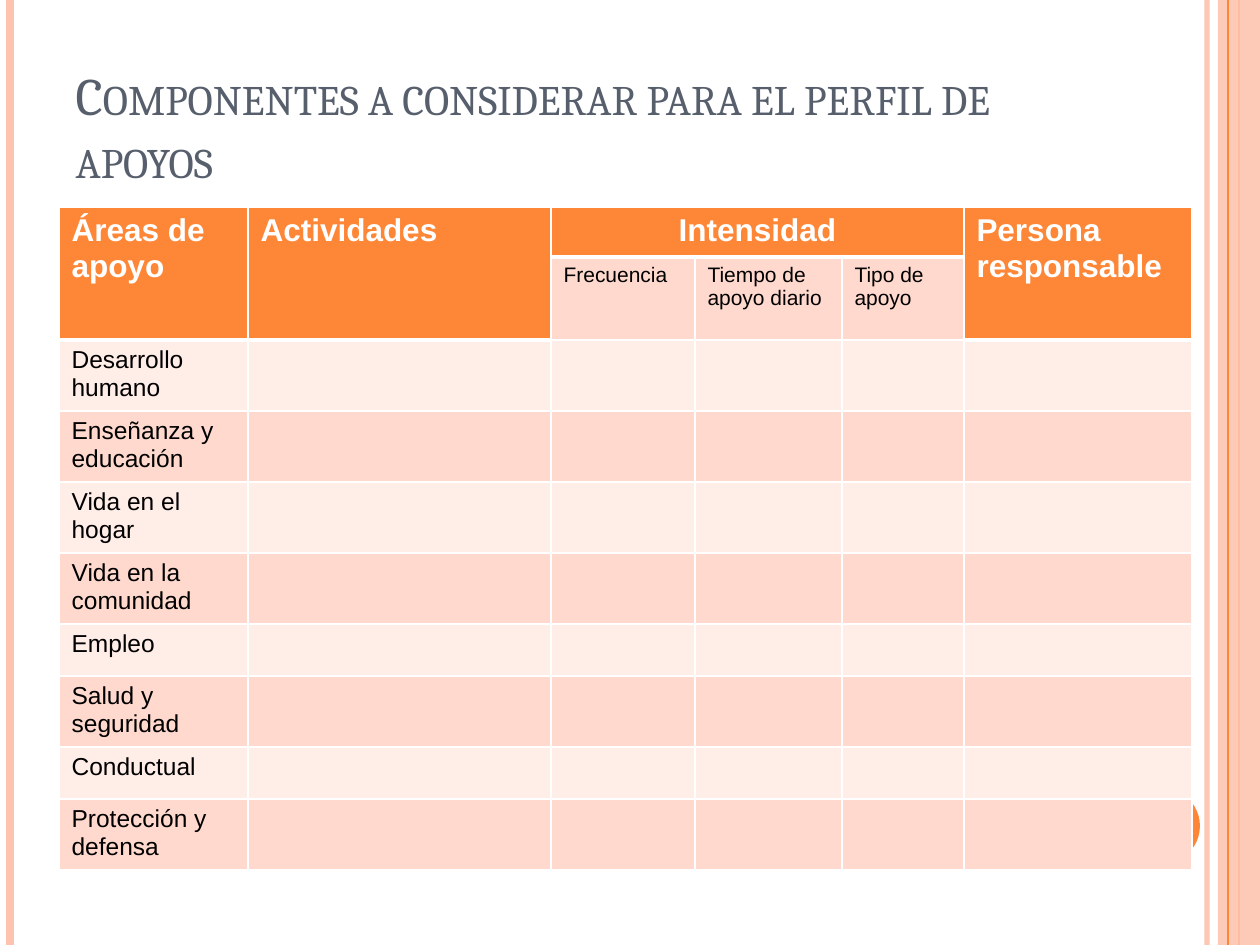
from lxml.etree import SubElement
from pptx import Presentation
from pptx.dml.color import RGBColor
from pptx.enum.shapes import MSO_CONNECTOR, MSO_SHAPE
from pptx.enum.text import MSO_ANCHOR, MSO_AUTO_SIZE, PP_ALIGN
from pptx.oxml.ns import qn
from pptx.util import Pt

PX = 914400 / 126
WIDTH, HEIGHT = 1260, 945
COLORS = {
    "orange": "FE8637", "peach": "FEC3AE", "slate": "575F6D",
    "band_dark": "FFD9CE", "band_light": "FFEDE8",
    "white": "FFFFFF", "black": "000000",
}
# x, colour, width in points, opacity in percent
VERTICAL_LINES = [
    (1207, "peach", 3, 93), (10, "peach", 4.5, 100),
    (1239, "orange", 1.5, 100), (1228, "orange", 0.75, 100),
]
COLUMN_WIDTHS = [189, 303, 144, 147, 122, 228]
ROW_HEIGHTS = [50, 83, 71, 71, 71, 71, 52, 71, 52, 71]
HEADINGS = ["Áreas de apoyo", "Actividades", "Intensidad", "", "", "Persona responsable"]
SUBHEADINGS = ["", "", "Frecuencia", "Tiempo de apoyo diario", "Tipo de apoyo", ""]
SUPPORT_AREAS = [
    "Desarrollo humano", "Enseñanza y educación", "Vida en el hogar",
    "Vida en la comunidad", "Empleo", "Salud y seguridad", "Conductual",
    "Protección y defensa",
]
INTENSITY_COLUMNS = range(2, 5)
HEADING_FONT = {"name": "Arial", "size": Pt(18), "bold": True}
SUBHEADING_FONT = {"name": "Arial", "size": Pt(12), "bold": False}
BODY_FONT = {"name": "Arial", "size": Pt(14), "bold": False}


def px(value):
    return round(value * PX)


def rgb(name):
    return RGBColor.from_string(COLORS[name])


def format_font(font, values, color):
    for attribute, value in values.items():
        setattr(font, attribute, value)
    font.color.rgb = rgb(color)


def set_opacity(properties, percent):
    color = next(properties.iter(qn("a:srgbClr")))
    SubElement(color, qn("a:alpha"), val=str(percent * 1000))


def add_solid_shape(slide, kind, box, color):
    shape = slide.shapes.add_shape(kind, *map(px, box))
    shape.shadow.inherit = False
    shape.fill.solid()
    shape.fill.fore_color.rgb = rgb(color)
    shape.line.fill.background()
    return shape


def add_vertical_line(slide, x, top, height, color, width, opacity):
    line = slide.shapes.add_connector(
        MSO_CONNECTOR.STRAIGHT, px(x), px(top), px(x), px(top + height))
    line.line.color.rgb = rgb(color)
    line.line.width = Pt(width)
    properties = line._element.spPr
    if opacity < 100:
        set_opacity(properties, opacity)
    SubElement(properties, qn("a:effectLst"))


def add_decoration(slide, left, top, width, height):
    """Draw the side stripes and the disc at the right edge."""
    lines = [(left + x, top, height, *style) for x, *style in VERTICAL_LINES]
    for line in lines[:3]:
        add_vertical_line(slide, *line)
    stripe = add_solid_shape(
        slide, MSO_SHAPE.RECTANGLE, (left + width - 42, top, 42, height), "peach")
    set_opacity(stripe._element.spPr, 87)
    add_vertical_line(slide, *lines[3])
    add_solid_shape(
        slide, MSO_SHAPE.OVAL, (left + width - 136, top + height - 157, 76, 76), "orange")


def place_title(slide, left, top, width, height):
    title = slide.shapes.title
    box = {"left": left, "top": top, "width": width, "height": height}
    for attribute, value in box.items():
        setattr(title, attribute, px(value))
    frame = title.text_frame
    frame.word_wrap = True
    frame.auto_size = MSO_AUTO_SIZE.NONE
    frame.vertical_anchor = MSO_ANCHOR.BOTTOM
    paragraph = frame.paragraphs[0]
    paragraph.alignment = PP_ALIGN.LEFT
    run = paragraph.add_run()
    run.text = "Componentes a considerar para el perfil de apoyos"
    format_font(run.font, {"name": "Cambria", "size": Pt(30)}, "slate")
    run.font._element.set("cap", "small")


def is_heading(row, column):
    return row == 0 or (row == 1 and column not in INTENSITY_COLUMNS)


def set_borders(cell, widths):
    properties = cell._tc.get_or_add_tcPr()
    for side, width in widths.items():
        border = SubElement(properties, qn(f"a:ln{side}"), w=str(Pt(width)))
        fill = SubElement(border, qn("a:solidFill"))
        SubElement(fill, qn("a:srgbClr"), val=COLORS["white"])


def format_cell(cell, row, column, text):
    heading = is_heading(row, column)
    below_heading = row > 0 and not heading and is_heading(row - 1, column)
    set_borders(cell, {"L": 1, "R": 1, "T": 3 if below_heading else 1,
                       "B": 3 if heading else 1})
    cell.fill.solid()
    band = "band_dark" if row % 2 else "band_light"
    cell.fill.fore_color.rgb = rgb("orange" if heading else band)
    if text:
        cell.text = text
        values = HEADING_FONT if heading else SUBHEADING_FONT if row == 1 else BODY_FONT
        run = cell.text_frame.paragraphs[0].runs[0]
        format_font(run.font, values, "white" if heading else "black")


def add_support_table(slide, left, top):
    rows = [HEADINGS, SUBHEADINGS] + [
        [area] + [""] * (len(COLUMN_WIDTHS) - 1) for area in SUPPORT_AREAS]
    table = slide.shapes.add_table(
        len(rows), len(COLUMN_WIDTHS), px(left), px(top),
        px(sum(COLUMN_WIDTHS)), px(sum(ROW_HEIGHTS))).table
    table.first_row = table.horz_banding = False
    for column, width in zip(table.columns, COLUMN_WIDTHS):
        column.width = px(width)
    for row, height in zip(table.rows, ROW_HEIGHTS):
        row.height = px(height)
    for row, texts in enumerate(rows):
        for column, text in enumerate(texts):
            format_cell(table.cell(row, column), row, column, text)
    for column in (0, 1, 5):
        table.cell(0, column).merge(table.cell(1, column))
    intensity = table.cell(0, INTENSITY_COLUMNS[0])
    intensity.merge(table.cell(0, INTENSITY_COLUMNS[-1]))
    intensity.text_frame.paragraphs[0].alignment = PP_ALIGN.CENTER


def main():
    presentation = Presentation()
    presentation.slide_width, presentation.slide_height = px(WIDTH), px(HEIGHT)
    slide = presentation.slides.add_slide(presentation.slide_layouts[5])
    add_decoration(slide, 0, 0, WIDTH, HEIGHT)
    place_title(slide, 63, 38, 1029, 157)
    add_support_table(slide, 59, 207)
    presentation.save("out.pptx")


if __name__ == "__main__":
    main()
